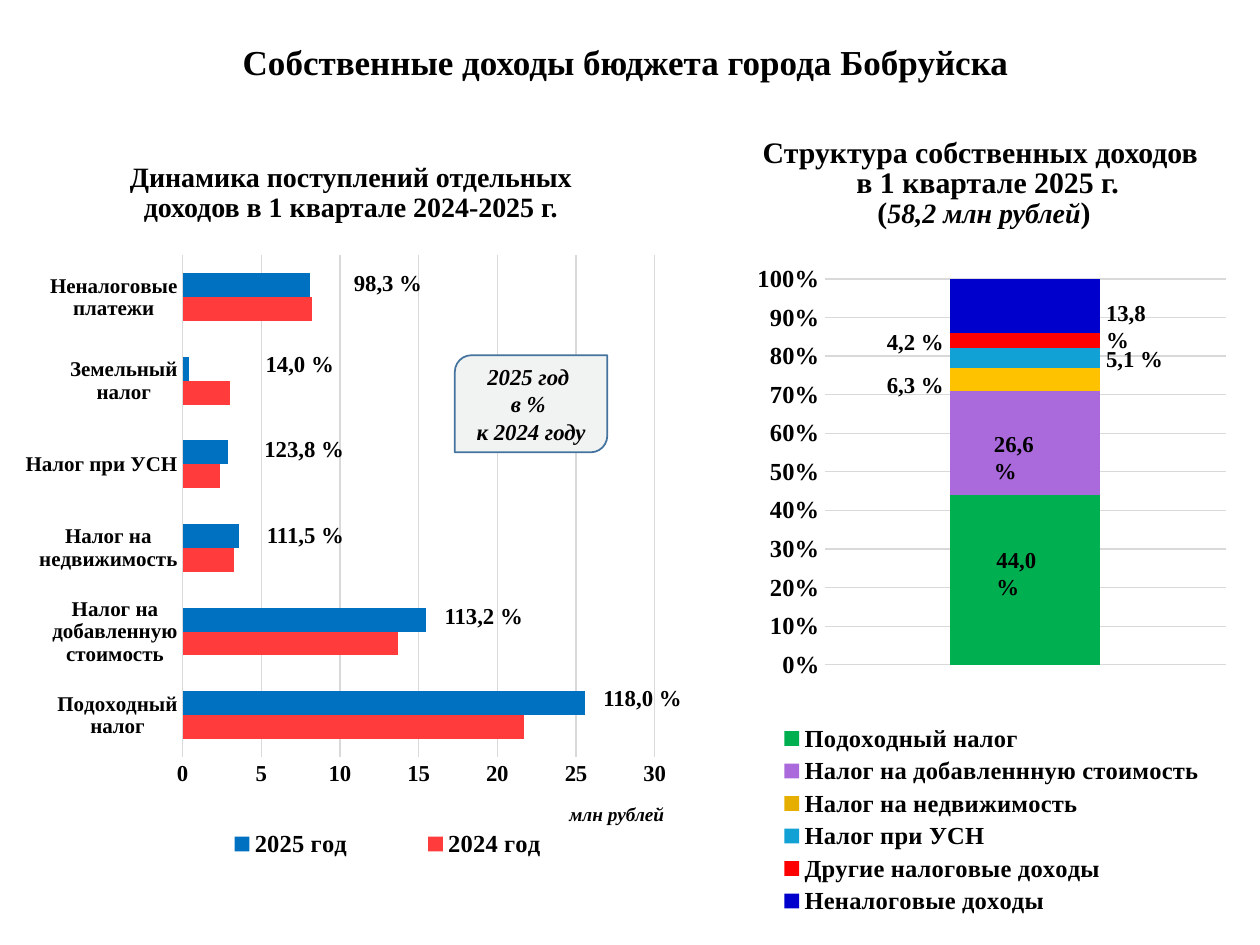
from lxml.etree import SubElement
from pptx import Presentation
from pptx.chart.data import CategoryChartData
from pptx.dml.color import RGBColor
from pptx.enum.chart import XL_CHART_TYPE as ChartType
from pptx.enum.chart import XL_LEGEND_POSITION as LegendPosition
from pptx.enum.chart import XL_TICK_MARK as TickMark
from pptx.enum.shapes import MSO_SHAPE as Shape
from pptx.enum.text import MSO_ANCHOR as Anchor
from pptx.enum.text import PP_ALIGN as Align
from pptx.oxml.ns import qn
from pptx.util import Inches, Pt

FONT = "Times New Roman"
BLACK = RGBColor(0x00, 0x00, 0x00)
GRID = RGBColor(0xD9, 0xD9, 0xD9)
RED = RGBColor(0xFF, 0x3B, 0x3B)
BLUE = RGBColor(0x00, 0x70, 0xC0)
GREEN = RGBColor(0x00, 0xB0, 0x50)
VIOLET = RGBColor(0xAB, 0x6A, 0xDC)
AMBER = RGBColor(0xE6, 0xAF, 0x00)
YELLOW = RGBColor(0xFE, 0xC2, 0x00)
SKY = RGBColor(0x12, 0xA1, 0xD4)
BRIGHT_RED = RGBColor(0xFF, 0x00, 0x00)
NAVY = RGBColor(0x00, 0x00, 0xCC)
NOTE_FILL = RGBColor(0xF1, 0xF3, 0xF2)
NOTE_LINE = RGBColor(0x43, 0x73, 0x9E)

TAXES = ["Подоходный налог", "Налог на добавленную стоимость",
         "Налог на недвижимость", "Налог при УСН",
         "Земельный налог", "Неналоговые платежи"]
DYNAMICS = [("2024 год", [21.7, 13.7, 3.3, 2.4, 3, 8.2], RED),
            ("2025 год", [25.6, 15.5, 3.6, 2.9, 0.4, 8.1], BLUE)]
STRUCTURE = [("Подоходный налог", [44], GREEN),
             ("Налог на добавленнную стоимость", [27], VIOLET),
             ("Налог на недвижимость", [6], AMBER),
             ("Налог при УСН", [5], SKY),
             ("Другие налоговые доходы", [4], BRIGHT_RED),
             ("Неналоговые доходы", [14], NAVY)]

# Percentages: text, left, top
GROWTH_LABELS = [("118,0 %", 4.69, 5.38), ("113,2 %", 3.43, 4.73),
                 ("111,5 %", 2.02, 4.08), ("123,8 %", 2.0, 3.4),
                 ("14,0 %", 2.01, 2.73), ("98,3 %", 2.71, 2.08)]
SHARE_LABELS = [("44,0 %", 7.81, 4.28), ("26,6 %", 7.79, 3.36),
                ("6,3 %", 6.94, 2.89), ("5,1 %", 8.68, 2.69),
                ("4,2 %", 6.94, 2.55), ("13,8 %", 8.68, 2.32)]


def format_font(font, size, italic=False):
    font.name, font.size = FONT, Pt(size)
    font.bold, font.italic = True, italic
    font.color.rgb = BLACK


def write_text(shape, lines, size=13, italic=False, align=Align.LEFT,
               spacing=None, wrap=False, anchor=Anchor.TOP):
    """Each line is a string or a list of (text, size, italic) runs."""
    frame = shape.text_frame
    frame.word_wrap, frame.vertical_anchor = wrap, anchor
    for index, line in enumerate(lines):
        paragraph = frame.paragraphs[0] if index == 0 else frame.add_paragraph()
        paragraph.alignment = align
        if spacing:
            paragraph.line_spacing = spacing
        runs = [(line, size, italic)] if isinstance(line, str) else line
        for text, run_size, run_italic in runs:
            run = paragraph.add_run()
            run.text = text
            format_font(run.font, run_size, run_italic)


def add_text(slide, box, lines, **text_format):
    shape = slide.shapes.add_textbox(*map(Inches, box))
    write_text(shape, lines, **text_format)


def set_layout(element, shares, inner=False):
    """Place a plot area or legend by shares of the chart's size."""
    layout = element.find(qn("c:layout"))
    if layout is None:
        layout = SubElement(element, qn("c:layout"))
        position = element.find(qn("c:legendPos"))
        if position is not None:
            position.addnext(layout)
        else:
            element.insert(0, layout)
    for child in list(layout):
        layout.remove(child)
    manual = SubElement(layout, qn("c:manualLayout"))
    settings = [("layoutTarget", "inner")] if inner else []
    settings += [("xMode", "edge"), ("yMode", "edge")]
    settings += zip("xywh", map(str, shares))
    for name, value in settings:
        SubElement(manual, qn("c:" + name)).set("val", value)


def add_chart(slide, box, kind, categories, series_rows, gap, plot_shares,
              legend_shares, axis_size, number_format):
    data = CategoryChartData()
    data.categories = categories
    for name, values, _ in series_rows:
        data.add_series(name, values)
    chart = slide.shapes.add_chart(kind, *map(Inches, box), data).chart
    chart.has_title = False
    format_font(chart.font, 14)

    # Bars
    plot = chart.plots[0]
    plot.gap_width, plot.vary_by_categories = gap, False
    for series, (_, _, color) in zip(plot.series, series_rows):
        series.format.fill.solid()
        series.format.fill.fore_color.rgb = color
        series.invert_if_negative = False

    # Value axis
    axis = chart.value_axis
    axis.major_tick_mark = axis.minor_tick_mark = TickMark.NONE
    axis.format.line.fill.background()
    axis.major_gridlines.format.line.color.rgb = GRID
    axis.major_gridlines.format.line.width = Pt(0.75)
    axis.tick_labels.number_format = number_format
    axis.tick_labels.number_format_is_linked = False
    format_font(axis.tick_labels.font, axis_size)

    # Legend and plot position
    chart.has_legend = True
    chart.legend.position = LegendPosition.BOTTOM
    chart.legend.include_in_layout = False
    format_font(chart.legend.font, 14)
    chart_element = chart.element.find(qn("c:chart"))
    set_layout(chart_element.find(qn("c:plotArea")), plot_shares, inner=True)
    set_layout(chart_element.find(qn("c:legend")), legend_shares)
    return chart


def add_dynamics(slide):
    add_text(slide, (0.65, 1.25, 4.27, 0.58),
             ["Динамика поступлений отдельных доходов в 1 квартале 2024-2025 г."],
             size=16, align=Align.CENTER, spacing=Pt(17), wrap=True)
    chart = add_chart(slide, (0.2, 1.92, 5.43, 5.31), ChartType.BAR_CLUSTERED,
                      TAXES, DYNAMICS, 150, (0.23, 0.02, 0.69, 0.75),
                      (0.2, 0.86, 0.66, 0.08), 13, "#,##0")
    chart.value_axis.major_unit = 5
    chart.value_axis.minimum_scale, chart.value_axis.maximum_scale = 0, 30
    axis = chart.category_axis
    axis.major_tick_mark = TickMark.NONE
    axis.format.line.fill.background()
    format_font(axis.tick_labels.font, 12)
    add_text(slide, (4.42, 6.32, 0.97, 0.29), ["млн рублей"], size=11, italic=True)
    for text, left, top in GROWTH_LABELS:
        add_text(slide, (left, top, 0.88, 0.32), [text])

    # Explanation of the percentages
    note = slide.shapes.add_shape(Shape.ROUND_2_DIAG_RECTANGLE,
                                  *map(Inches, (3.61, 2.82, 1.21, 0.77)))
    note.adjustments[0], note.adjustments[1] = 0.17, 0
    note.shadow.inherit = False
    note.fill.solid()
    note.fill.fore_color.rgb = NOTE_FILL
    note.line.color.rgb, note.line.width = NOTE_LINE, Pt(1)
    write_text(note, ["2025 год ", "в % ", "к 2024 году"], italic=True,
               align=Align.CENTER, wrap=True, anchor=Anchor.MIDDLE)


def add_structure(slide):
    add_text(slide, (5.94, 1.06, 3.74, 0.82),
             ["Структура собственных доходов ", " в 1 квартале 2025 г.",
              [("(", 17, False), ("58,2 млн рублей", 16, True), (")", 17, False)]],
             size=17, align=Align.CENTER, spacing=Pt(17))
    chart = add_chart(slide, (5.44, 1.94, 4.42, 5.47),
                      ChartType.COLUMN_STACKED_100, ["1"], STRUCTURE, 168,
                      (0.25, 0.05, 0.72, 0.56), (0.15, 0.69, 0.8, 0.29), 14, "0%")
    chart.plots[0].overlap = 100
    chart.category_axis.visible = False
    # The property tax bar is brighter than its legend key
    fill = chart.plots[0].series[2].points[0].format.fill
    fill.solid()
    fill.fore_color.rgb = YELLOW
    for text, left, top in SHARE_LABELS:
        add_text(slide, (left, top, 0.71, 0.39), [text])


def main():
    presentation = Presentation()
    presentation.slide_width, presentation.slide_height = Inches(10), Inches(7.5)
    slide = presentation.slides.add_slide(presentation.slide_layouts[5])
    title = slide.shapes.title
    title.left, title.top, title.width, title.height = map(Inches, (0, 0.31, 10, 0.48))
    write_text(title, ["Собственные доходы бюджета города Бобруйска "], size=20,
               align=Align.CENTER, spacing=0.9, wrap=True)
    add_structure(slide)
    add_dynamics(slide)
    presentation.save("out.pptx")


if __name__ == "__main__":
    main()
